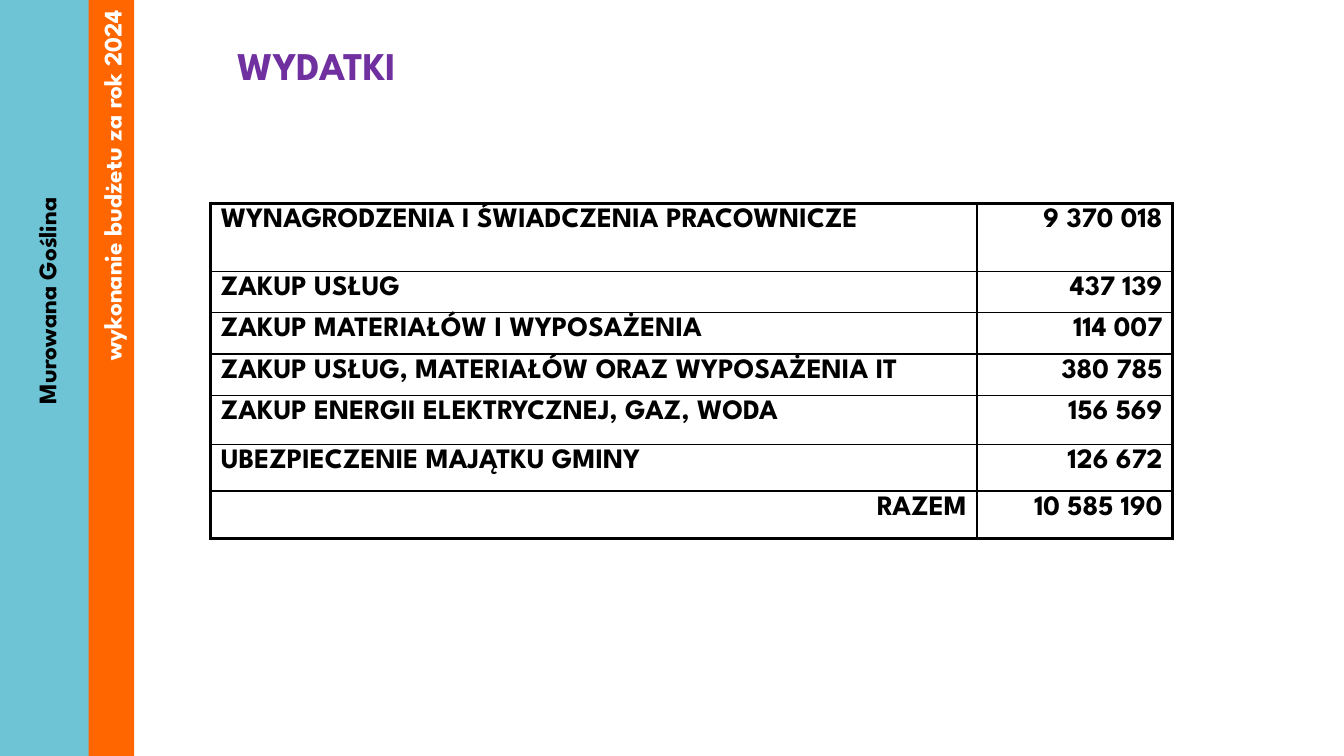
from dataclasses import dataclass

from lxml import etree
from pptx import Presentation
from pptx.dml.color import RGBColor
from pptx.enum.shapes import MSO_SHAPE
from pptx.enum.text import MSO_ANCHOR, MSO_AUTO_SIZE, PP_ALIGN
from pptx.oxml.ns import qn
from pptx.util import Inches, Pt

LEFT, MID, RIGHT = PP_ALIGN.LEFT, PP_ALIGN.CENTER, PP_ALIGN.RIGHT
CENTER = MSO_ANCHOR.MIDDLE
GROW = MSO_AUTO_SIZE.SHAPE_TO_FIT_TEXT
RECT = MSO_SHAPE.RECTANGLE

BLACK = RGBColor(0x00, 0x00, 0x00)
WHITE = RGBColor(0xFF, 0xFF, 0xFF)
TEAL = RGBColor(0x6E, 0xC4, 0xD5)
ORANGE = RGBColor(0xFF, 0x66, 0x00)
PURPLE = RGBColor(0x70, 0x30, 0xA0)
FONT = "League Spartan"
THICK, THIN = 2.25, 1


@dataclass
class Box:
    left: float
    top: float
    width: float
    height: float

    def place(self) -> tuple:
        return tuple(map(Inches, (self.left, self.top, self.width, self.height)))


@dataclass
class Cost:
    label: str
    sum: str
    height: float
    align: PP_ALIGN = LEFT


COSTS = [
    Cost("WYNAGRODZENIA I ŚWIADCZENIA PRACOWNICZE", "9 370 018", 0.67),
    Cost("ZAKUP USŁUG", "437 139", 0.41),
    Cost("ZAKUP MATERIAŁÓW I WYPOSAŻENIA", "114 007", 0.41),
    Cost("ZAKUP USŁUG, MATERIAŁÓW ORAZ WYPOSAŻENIA IT", "380 785", 0.41),
    Cost("ZAKUP ENERGII ELEKTRYCZNEJ, GAZ, WODA", "156 569", 0.49),
    Cost("UBEZPIECZENIE MAJĄTKU GMINY", "126 672", 0.46),
    Cost("RAZEM", "10 585 190", 0.47, RIGHT),
]
WIDTHS = (7.6, 1.94)


def write(frame, text: str, *, size: float, color: RGBColor = BLACK,
          align: PP_ALIGN = LEFT, spacing: float = 1.0) -> None:
    para = frame.paragraphs[0]
    para.alignment = align
    para.line_spacing = spacing
    run = para.add_run()
    run.text = text
    font = run.font
    font.name, font.size, font.bold = FONT, Pt(size), True
    font.color.rgb = color


def add_bar(slide, box: Box, color: RGBColor):
    bar = slide.shapes.add_shape(RECT, *box.place())
    bar.shadow.inherit = False
    bar.fill.solid()
    bar.fill.fore_color.rgb = color
    bar.line.fill.background()
    return bar


def add_label(slide, box: Box, text: str, *, wrap: bool = True, turn: float = 0,
              **format) -> None:
    label = slide.shapes.add_textbox(*box.place())
    label.rotation = turn
    frame = label.text_frame
    frame.word_wrap = wrap
    frame.auto_size = GROW
    write(frame, text, **format)


def add_edges(cell, **edges: float) -> None:
    # Borders come before the fill in the cell properties
    props = cell._tc.get_or_add_tcPr()
    for spot, side in enumerate("LRTB"):
        line = etree.Element(qn(f"a:ln{side}"), w=str(Pt(edges[side])))
        fill = etree.SubElement(line, qn("a:solidFill"))
        etree.SubElement(fill, qn("a:srgbClr"), val=str(BLACK))
        props.insert(spot, line)


def add_costs(slide, left: float, top: float) -> None:
    box = Box(left, top, sum(WIDTHS), sum(cost.height for cost in COSTS))
    table = slide.shapes.add_table(len(COSTS), len(WIDTHS), *box.place()).table
    table.first_row = table.horz_banding = False
    for col, width in zip(table.columns, WIDTHS):
        col.width = Inches(width)
    last = len(COSTS) - 1
    for i, cost in enumerate(COSTS):
        table.rows[i].height = Inches(cost.height)
        for j, (text, align) in enumerate([(cost.label, cost.align), (cost.sum, RIGHT)]):
            cell = table.cell(i, j)
            cell.fill.background()
            write(cell.text_frame, text, size=20, align=align, spacing=0.93)
            add_edges(cell, L=THIN if j else THICK, R=THICK if j else THIN,
                      T=THIN if i else THICK, B=THICK if i == last else THIN)


def main() -> None:
    deck = Presentation()
    deck.slide_width, deck.slide_height = Inches(13.33), Inches(7.5)
    slide = deck.slides.add_slide(deck.slide_layouts[6])

    # Side bars
    add_bar(slide, Box(0, 0, 0.92, 7.5), TEAL)
    add_label(slide, Box(-0.8, 2.65, 2.52, 0.4), "Murowana Goślina",
              wrap=False, turn=270, size=18)
    bar = add_bar(slide, Box(0.88, 0, 0.45, 7.5), ORANGE)
    frame = bar.text_frame
    frame.vertical_anchor = CENTER
    bar.element.txBody.bodyPr.set("vert", "vert270")
    write(frame, "wykonanie budżetu za rok 2024", size=18, color=WHITE, align=RIGHT)

    # Table of costs
    add_costs(slide, 2.09, 2.02)

    # Title
    add_label(slide, Box(-0.19, 0.36, 6.67, 0.57), "WYDATKI",
              size=28, color=PURPLE, align=MID)

    deck.save("out.pptx")


if __name__ == "__main__":
    main()
